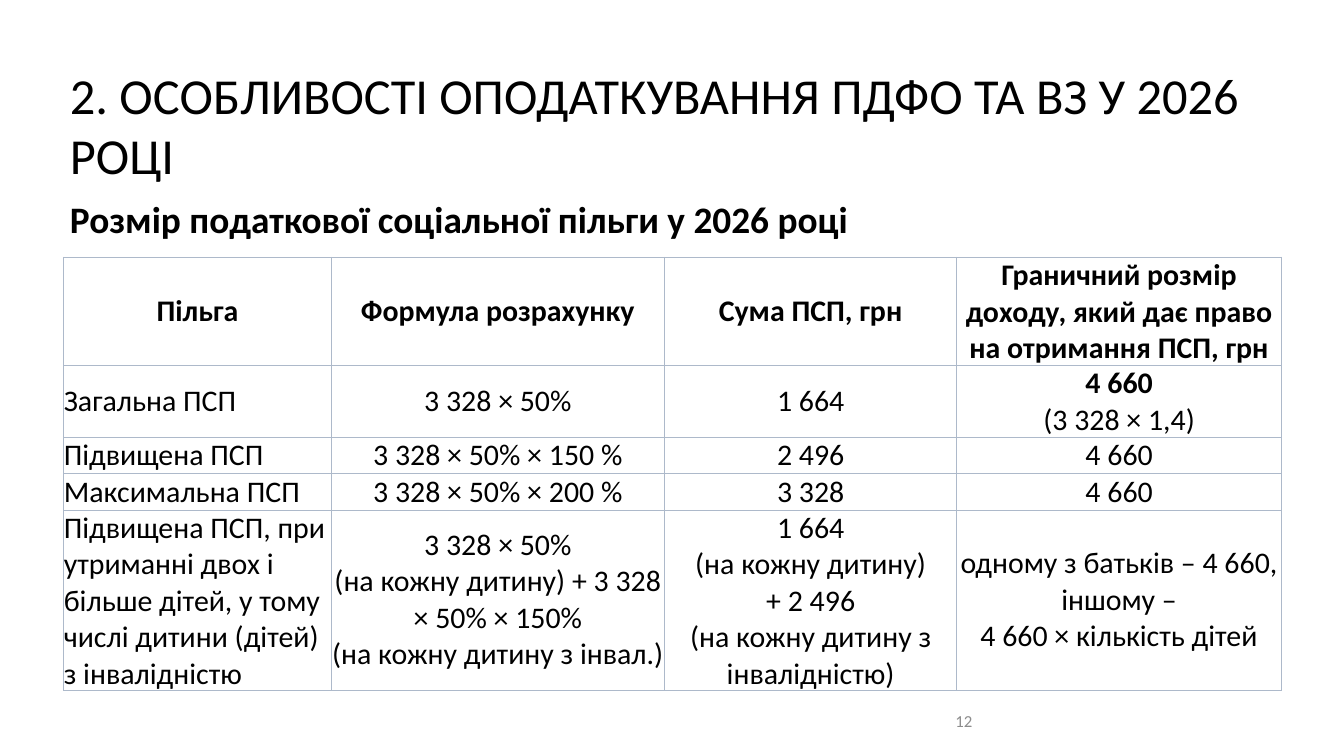
"""Build the slide on the size of the social tax relief in 2026."""
from lxml.etree import SubElement
from pptx import Presentation
from pptx.dml.color import RGBColor
from pptx.enum.text import MSO_ANCHOR, PP_ALIGN
from pptx.oxml.ns import qn
from pptx.util import Inches, Pt

TITLE = "2. ОСОБЛИВОСТІ ОПОДАТКУВАННЯ ПДФО ТА ВЗ У 2026 РОЦІ"
LEAD = "Розмір податкової соціальної пільги у 2026 році"
NUMBER = "12"
HEAD = ["Пільга", "Формула розрахунку", "Сума ПСП, грн",
        "Граничний розмір доходу, який дає право на отримання ПСП, грн"]
BODY = [
    ["Загальна ПСП", "3 328 × 50%", "1 664", "4 660\n(3 328 × 1,4)"],
    ["Підвищена ПСП", "3 328 × 50% × 150 %", "2 496", "4 660"],
    ["Максимальна ПСП", "3 328 × 50% × 200 %", "3 328", "4 660"],
    ["Підвищена ПСП, при утриманні двох і більше дітей, у тому числі "
     "дитини (дітей) з інвалідністю",
     "3 328 × 50%\n(на кожну дитину) + 3 328 × 50% × 150%\n"
     "(на кожну дитину з інвал.)",
     "1 664\n(на кожну дитину)\n+ 2 496\n(на кожну дитину з інвалідністю)",
     "одному з батьків – 4 660,\nіншому –\n4 660 × кількість дітей"],
]
BOLD = {(1, 3, 0)}
WIDTHS = [3.98, 4.96, 4.35, 4.83]
HEIGHTS = [1.61, 1.07, 0.54, 0.54, 2.68]
BLACK, WHITE, GRAY, EDGE = "000000", "FFFFFF", "8C8C8C", "ADB9CA"


def color(code):
    """Turn a hex string into a colour."""
    return RGBColor.from_string(code)


def style(para, size, code=BLACK, bold=False, align=PP_ALIGN.LEFT):
    """Format one paragraph and its runs."""
    para.alignment = align
    for run in para.runs:
        font = run.font
        font.name, font.size, font.bold = "Calibri", Pt(size), bold
        font.color.rgb = color(code)


def place(shape, box, text, size, code=BLACK, bold=False,
          anchor=MSO_ANCHOR.TOP):
    """Move a text shape and fill it with formatted text."""
    shape.left, shape.top, shape.width, shape.height = map(Inches, box)
    frame = shape.text_frame
    frame.text = text
    frame.word_wrap = True
    frame.vertical_anchor = anchor
    style(frame.paragraphs[0], size, code, bold)


def border(cell):
    """Draw the four thin edges of a cell ahead of its fill."""
    props = cell._tc.get_or_add_tcPr()
    for spot, side in enumerate(("lnL", "lnR", "lnT", "lnB")):
        line = SubElement(props, qn("a:" + side), w=str(Pt(1)))
        fill = SubElement(line, qn("a:solidFill"))
        SubElement(fill, qn("a:srgbClr"), val=EDGE)
        props.insert(spot, line)


def fill_cell(cell, text, row, col):
    """Write and format one table cell."""
    cell.text_frame.text = text
    cell.vertical_anchor = MSO_ANCHOR.MIDDLE
    cell.margin_left = cell.margin_right = 0
    cell.margin_top = cell.margin_bottom = 0
    cell.fill.solid()
    cell.fill.fore_color.rgb = color(WHITE)
    border(cell)
    align = PP_ALIGN.LEFT if row and not col else PP_ALIGN.CENTER
    for spot, para in enumerate(cell.text_frame.paragraphs):
        bold = row == 0 or (row, col, spot) in BOLD
        style(para, 32, bold=bold, align=align)


def add_grid(slide):
    """Add the table of reliefs."""
    rows = [HEAD] + BODY
    frame = slide.shapes.add_table(
        len(rows), len(HEAD), Inches(0.95), Inches(3.83),
        Inches(sum(WIDTHS)), Inches(sum(HEIGHTS)))
    table = frame.table
    table.horz_banding = False
    for col, width in zip(table.columns, WIDTHS):
        col.width = Inches(width)
    for row, height in zip(table.rows, HEIGHTS):
        row.height = Inches(height)
    for r, texts in enumerate(rows):
        for c, text in enumerate(texts):
            fill_cell(table.cell(r, c), text, r, c)


def main():
    """Build and save the slide."""
    deck = Presentation()
    deck.slide_width, deck.slide_height = Inches(20), Inches(11.25)
    slide = deck.slides.add_slide(deck.slide_layouts[5])
    place(slide.shapes.title, (0.94, 0.9, 18.11, 1.92), TITLE, 54)
    number = slide.shapes.add_textbox(0, 0, 0, 0)
    place(number, (14.12, 10.43, 4.5, 0.6), NUMBER, 18, GRAY,
          anchor=MSO_ANCHOR.MIDDLE)
    lead = slide.shapes.add_textbox(0, 0, 0, 0)
    place(lead, (0.94, 2.87, 18.07, 0.77), LEAD, 40, bold=True)
    add_grid(slide)
    deck.save("out.pptx")


if __name__ == "__main__":
    main()
